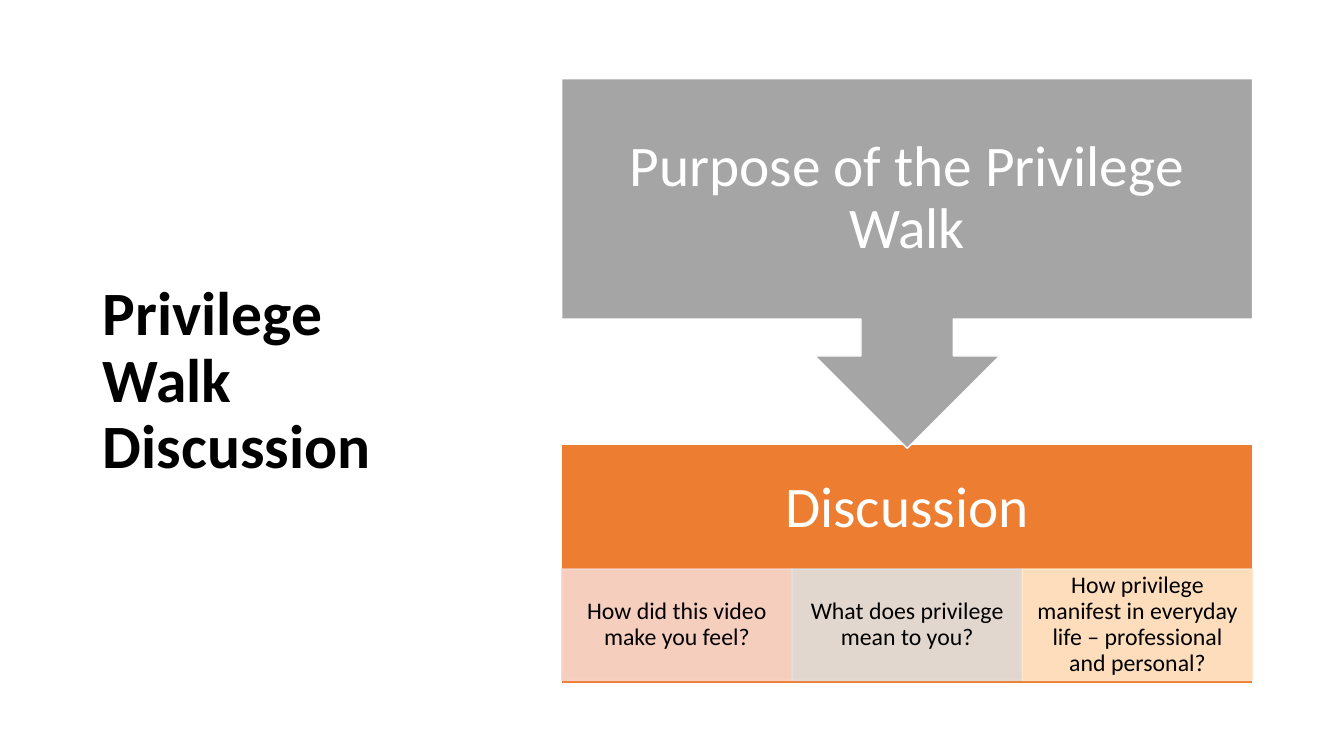
from lxml import etree
from pptx import Presentation
from pptx.dml.color import RGBColor
from pptx.enum.shapes import MSO_SHAPE
from pptx.enum.text import MSO_ANCHOR, PP_ALIGN
from pptx.oxml.ns import qn
from pptx.util import Pt

PX = 9525
RECT = MSO_SHAPE.RECTANGLE
CALLOUT = MSO_SHAPE.UP_ARROW_CALLOUT
MIDDLE = MSO_ANCHOR.MIDDLE
LEFT, CENTER = PP_ALIGN.LEFT, PP_ALIGN.CENTER

BLACK = RGBColor(0x00, 0x00, 0x00)
WHITE = RGBColor(0xFF, 0xFF, 0xFF)
GRAY = RGBColor(0xA5, 0xA5, 0xA5)
ORANGE = RGBColor(0xED, 0x7D, 0x31)
PINK = RGBColor(0xF8, 0xD7, 0xCE)
SILVER = RGBColor(0xE1, 0xE1, 0xE1)
CREAM = RGBColor(0xFF, 0xE8, 0xCC)

TITLE = {"size": Pt(44), "bold": True}
HEADING = {"size": Pt(41)}
QUESTION = {"size": Pt(17)}

BLOCK_LEFT, BLOCK_WIDTH = 535, 658
QUESTIONS = [
    ("How did this video make you feel?", PINK),
    ("What does privilege mean to you?", SILVER),
    ("How privilege manifest in everyday life – professional and personal?", CREAM),
]


def emu(*lengths):
    return [round(length * PX) for length in lengths]


def set_attributes(target, values):
    for name, value in values.items():
        setattr(target, name, value)


def write_text(box, text, look, color, align, inset_x, inset_y):
    frame = box.text_frame
    side, edge = emu(inset_x, inset_y)
    set_attributes(frame, {
        "word_wrap": True, "vertical_anchor": MIDDLE,
        "margin_left": side, "margin_right": side,
        "margin_top": edge, "margin_bottom": edge,
    })
    para = frame.paragraphs[0]
    set_attributes(para, {"alignment": align, "line_spacing": 0.9})
    span = para.add_run()
    span.text = text
    set_attributes(span.font, {"name": "Calibri", **look})
    span.font.color.rgb = color


def add_label(page, area, text, look, color, align=CENTER, inset_x=31, inset_y=31):
    box = page.shapes.add_textbox(*emu(*area))
    write_text(box, text, look, color, align, inset_x, inset_y)


def add_panel(page, kind, area, fill, line):
    panel = page.shapes.add_shape(kind, *emu(*area))
    panel.shadow.inherit = False
    panel.fill.solid()
    panel.fill.fore_color.rgb = fill
    panel.line.color.rgb = line
    panel.line.width = Pt(1)
    return panel


def add_question(page, area, text, color):
    panel = add_panel(page, RECT, area, color, color)
    for shade in panel._element.spPr.iter(qn("a:srgbClr")):
        etree.SubElement(shade, qn("a:alpha"), val="90000")
    write_text(panel, text, QUESTION, BLACK, CENTER, 12, 2)


def main():
    deck = Presentation()
    deck.slide_width, deck.slide_height = emu(1280, 720)
    page = deck.slides.add_slide(deck.slide_layouts[6])

    add_label(page, (88, 75, 354, 578), "Privilege Walk Discussion",
              TITLE, BLACK, LEFT, 10, 5)

    add_panel(page, RECT, (BLOCK_LEFT, 423, BLOCK_WIDTH, 228), ORANGE, WHITE)
    add_label(page, (BLOCK_LEFT, 423, BLOCK_WIDTH, 124), "Discussion", HEADING, WHITE)

    width = BLOCK_WIDTH / len(QUESTIONS)
    for index, (text, color) in enumerate(QUESTIONS):
        add_question(page, (BLOCK_LEFT + index * width, 542, width, 106), text, color)

    callout = add_panel(page, CALLOUT, (BLOCK_LEFT, 75, BLOCK_WIDTH, 352), GRAY, WHITE)
    callout.rotation = 180
    add_label(page, (BLOCK_LEFT, 75, BLOCK_WIDTH, 228),
              "Purpose of the Privilege Walk", HEADING, WHITE)

    deck.save("out.pptx")


if __name__ == "__main__":
    main()
